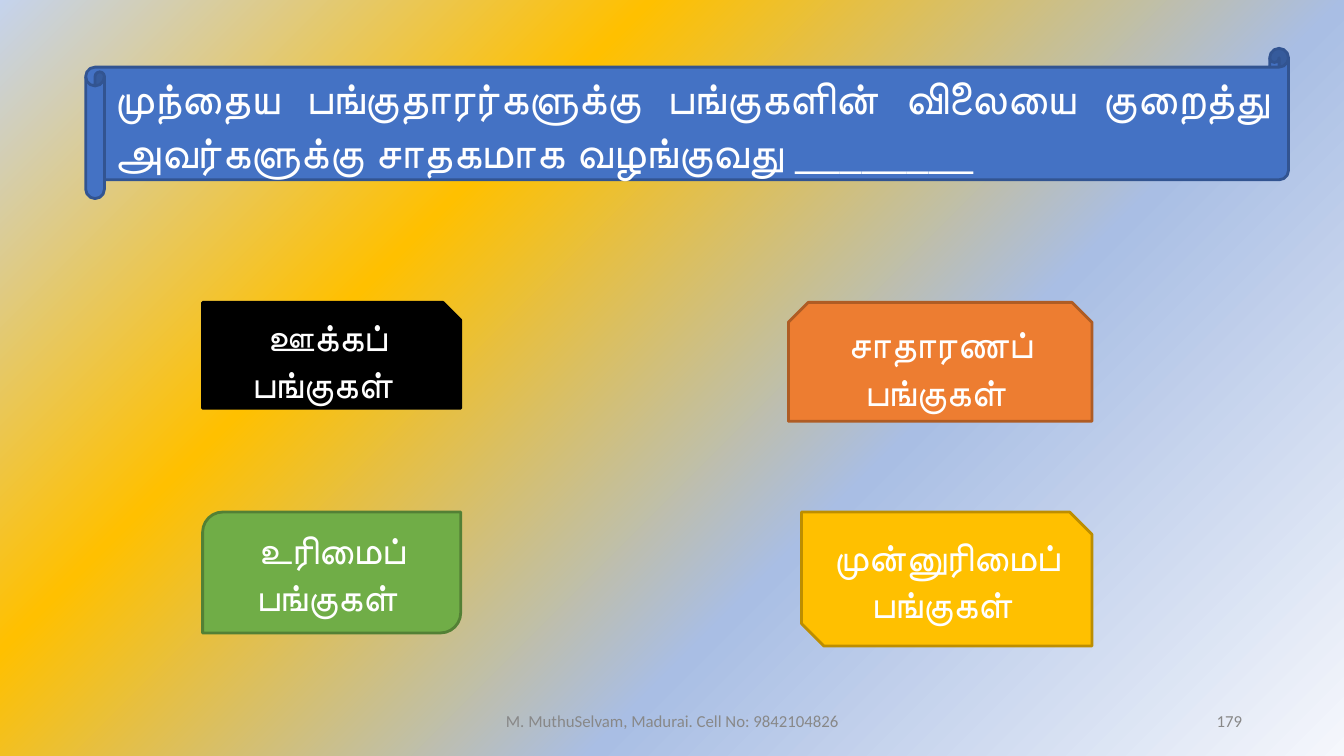
from lxml.etree import fromstring
from pptx import Presentation
from pptx.dml.color import RGBColor
from pptx.enum.shapes import MSO_SHAPE as Preset
from pptx.enum.text import MSO_ANCHOR as Anchor, MSO_AUTO_SIZE as AutoSize, PP_ALIGN as Align
from pptx.util import Inches, Pt

QUESTION = "முந்தைய பங்குதாரர்களுக்கு பங்குகளின் விலையை குறைத்து அவர்களுக்கு சாதகமாக வழங்குவது ________"
OPTIONS = [
    ("ஊக்கப் பங்குகள் ", 0, 0, 2.56, 1.05, Preset.SNIP_1_RECTANGLE, "black", "black"),
    ("சாதாரணப் பங்குகள் ", 1, 0, 3.01, 1.18, Preset.SNIP_2_SAME_RECTANGLE, "orange", "orange_line"),
    ("முன்னுரிமைப் பங்குகள் ", 1, 1, 2.88, 1.33, Preset.SNIP_2_DIAG_RECTANGLE, "gold", "gold_line"),
    ("உரிமைப் பங்குகள் ", 0, 1, 2.56, 1.2, Preset.ROUND_2_DIAG_RECTANGLE, "green", "green_line"),
]
FOOTERS = [
    ("M. MuthuSelvam, Madurai. Cell No: 9842104826", 4.42, 4.5, Align.CENTER),
    ("179", 9.42, 3, Align.RIGHT),
]
COLORS = {
    "blue": "4472C4", "blue_line": "325491", "black": "000000",
    "orange": "ED7D31", "orange_line": "AF5C24", "gold": "FFC000", "gold_line": "BD8E00",
    "green": "70AD47", "green_line": "538035", "white": "FFFFFF", "gray": "888888",
    "sky": "C5D3ED", "periwinkle": "A9BEE4", "mist": "F5F7FC",
}
BACKGROUND_STOPS = [(0, "sky"), (31, "gold"), (64, "periwinkle"), (100, "mist")]
BACKGROUND_ANGLE = 45
FONT = "Calibri"
WIDTH, HEIGHT = 13.33, 7.5
SCROLL = (0.85, 0.48, 11.93, 1.49)
ROLL = SCROLL[3] / 8
GRID_LEFT, GRID_RIGHT = 2.01, 10.83
ROW_TOP, ROW_STEP = 3, 2.08
FOOTER_TOP, FOOTER_HEIGHT = 6.95, 0.4


def rgb(name):
    return RGBColor.from_string(COLORS[name])


def set_background(slide):
    stops = "".join(
        f'<a:gs pos="{share * 1000}"><a:srgbClr val="{COLORS[name]}"/></a:gs>'
        for share, name in BACKGROUND_STOPS
    )
    slide.background.fill.solid()
    properties = slide.background.fill._xPr
    gradient = fromstring(
        '<a:gradFill xmlns:a="http://schemas.openxmlformats.org/drawingml/2006/main" rotWithShape="1">'
        f'<a:gsLst>{stops}</a:gsLst><a:lin ang="{BACKGROUND_ANGLE * 60000}" scaled="0"/></a:gradFill>'
    )
    properties.replace(properties[0], gradient)


def write(shape, text, size, color, alignment):
    frame = shape.text_frame
    frame.word_wrap = True
    frame.auto_size = AutoSize.NONE
    frame.vertical_anchor = Anchor.MIDDLE
    paragraph = frame.paragraphs[0]
    paragraph.alignment = alignment
    paragraph.line_spacing = 1.0
    run = paragraph.add_run()
    run.text = text
    run.font.name = FONT
    run.font.size = Pt(size)
    run.font.color.rgb = rgb(color)


def add_panel(slide, preset, box, fill, line):
    shape = slide.shapes.add_shape(preset, *map(Inches, box))
    shape.shadow.inherit = False
    shape.fill.solid()
    shape.fill.fore_color.rgb = rgb(fill)
    shape.line.color.rgb = rgb(line)
    shape.line.width = Pt(2)
    return shape


def add_question(slide):
    scroll = add_panel(slide, Preset.HORIZONTAL_SCROLL, SCROLL, "blue", "blue_line")
    left, top, width, height = SCROLL
    title = slide.shapes.title
    title.left, title.top = Inches(left + ROLL), Inches(top + ROLL)
    title.width, title.height = Inches(width - 1.5 * ROLL), Inches(height - 2 * ROLL)
    write(title, QUESTION, 32, "white", Align.JUSTIFY)
    title.element.addprevious(scroll.element)


def add_options(slide):
    for text, column, row, width, height, preset, fill, line in OPTIONS:
        left = GRID_RIGHT - width if column else GRID_LEFT
        box = (left, ROW_TOP + row * ROW_STEP, width, height)
        write(add_panel(slide, preset, box, fill, line), text, 28, "white", Align.CENTER)


def add_footers(slide):
    for text, left, width, alignment in FOOTERS:
        box = map(Inches, (left, FOOTER_TOP, width, FOOTER_HEIGHT))
        write(slide.shapes.add_textbox(*box), text, 12, "gray", alignment)


def main():
    presentation = Presentation()
    presentation.slide_width, presentation.slide_height = Inches(WIDTH), Inches(HEIGHT)
    slide = presentation.slides.add_slide(presentation.slide_layouts[5])
    set_background(slide)
    add_question(slide)
    add_options(slide)
    add_footers(slide)
    presentation.save("out.pptx")


if __name__ == "__main__":
    main()
